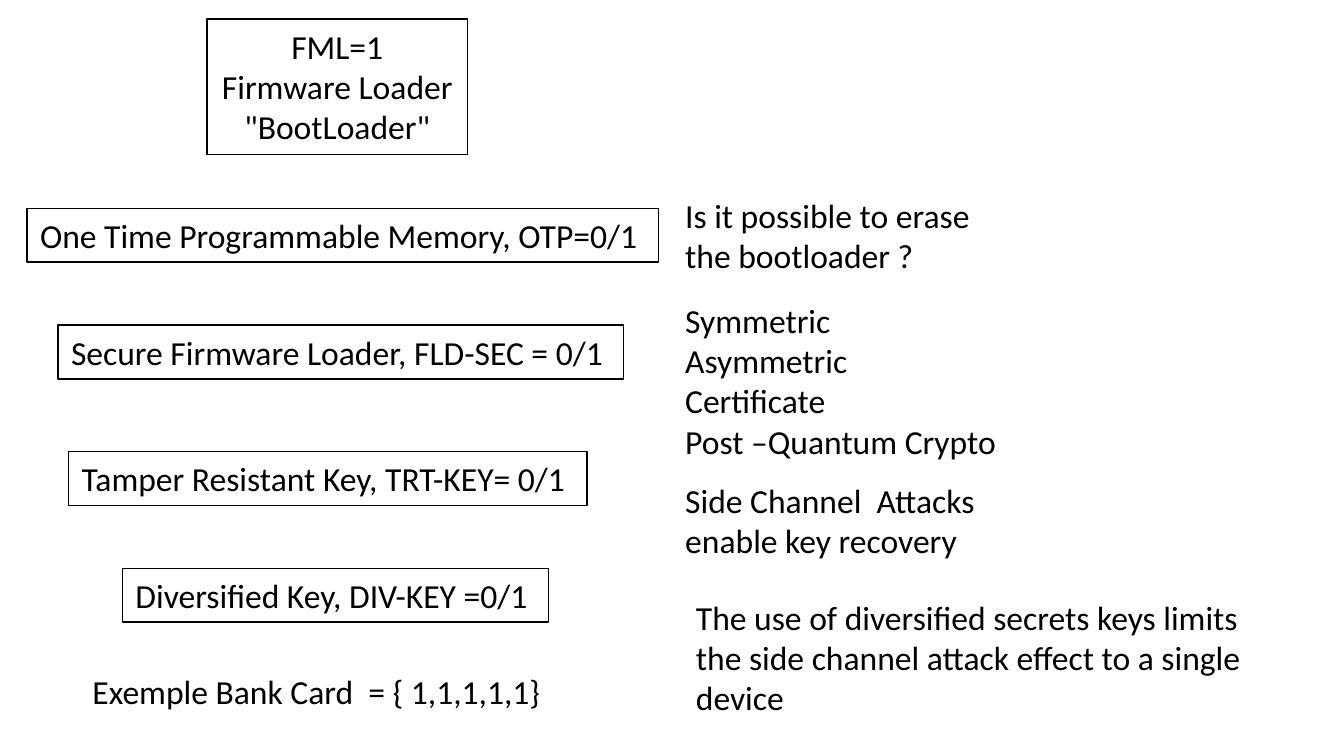
from pptx import Presentation
from pptx.dml.color import RGBColor
from pptx.enum import shapes, text
from pptx.util import Inches, Pt

BLACK = RGBColor(0, 0, 0)
LEFT, MID = text.PP_ALIGN.LEFT, text.PP_ALIGN.CENTER

deck = Presentation()
deck.slide_width = Inches(10)
deck.slide_height = Inches(10 * 9 / 16)
slide = deck.slides.add_slide(deck.slide_layouts[6])


def put(words, x, y, w, h, line=None, align=LEFT, wrap=True):
    """Place text, one paragraph per line; a line width in points adds a frame."""
    area = [Inches(v) for v in (x, y, w, h)]
    if line:
        box = slide.shapes.add_shape(shapes.MSO_SHAPE.RECTANGLE, *area)
        box.shadow.inherit = False
        box.fill.background()
        box.line.color.rgb = BLACK
        box.line.width = Pt(line)
    else:
        box = slide.shapes.add_textbox(*area)
    frame = box.text_frame
    frame.word_wrap = wrap
    frame.vertical_anchor = text.MSO_ANCHOR.TOP
    frame.text = words
    for par in frame.paragraphs:
        par.alignment = align
        font = par.runs[0].font
        font.name, font.size = "Calibri", Pt(18)
        font.color.rgb = BLACK


put('FML=1\nFirmware Loader\n"BootLoader"', 1.54, 0.14, 1.94, 1.01,
    line=0.75, align=MID, wrap=False)

# Security flags: text, left, top, width, frame weight
flags = [
    ("One Time Programmable Memory, OTP=0/1", 0.2, 1.55, 4.7, 0.75),
    ("Secure Firmware Loader, FLD-SEC = 0/1", 0.43, 2.42, 4.21, 1),
    ("Tamper Resistant Key, TRT-KEY= 0/1", 0.51, 3.36, 3.86, 0.75),
    ("Diversified Key, DIV-KEY =0/1", 0.91, 4.23, 3.17, 0.75),
]
for words, x, y, w, line in flags:
    put(words, x, y, w, 0.4, line=line)

# Remarks: text, left, top, width, height
notes = [
    ("Is it possible to erase the bootloader ?", 5, 1.4, 2.56, 0.71),
    ("Symmetric\nAsymmetric\nCertificate\nPost –Quantum Crypto",
     5, 2.18, 2.56, 1.31),
    ("Side Channel  Attacks enable key recovery", 5, 3.52, 2.68, 0.71),
    ("The use of diversified secrets keys limits the side channel attack "
     "effect to a single device", 5.08, 4.39, 4.27, 1.01),
    ("Exemple Bank Card  = { 1,1,1,1,1}", 0.59, 4.94, 3.57, 0.4),
]
for note in notes:
    put(*note)

deck.save("out.pptx")
